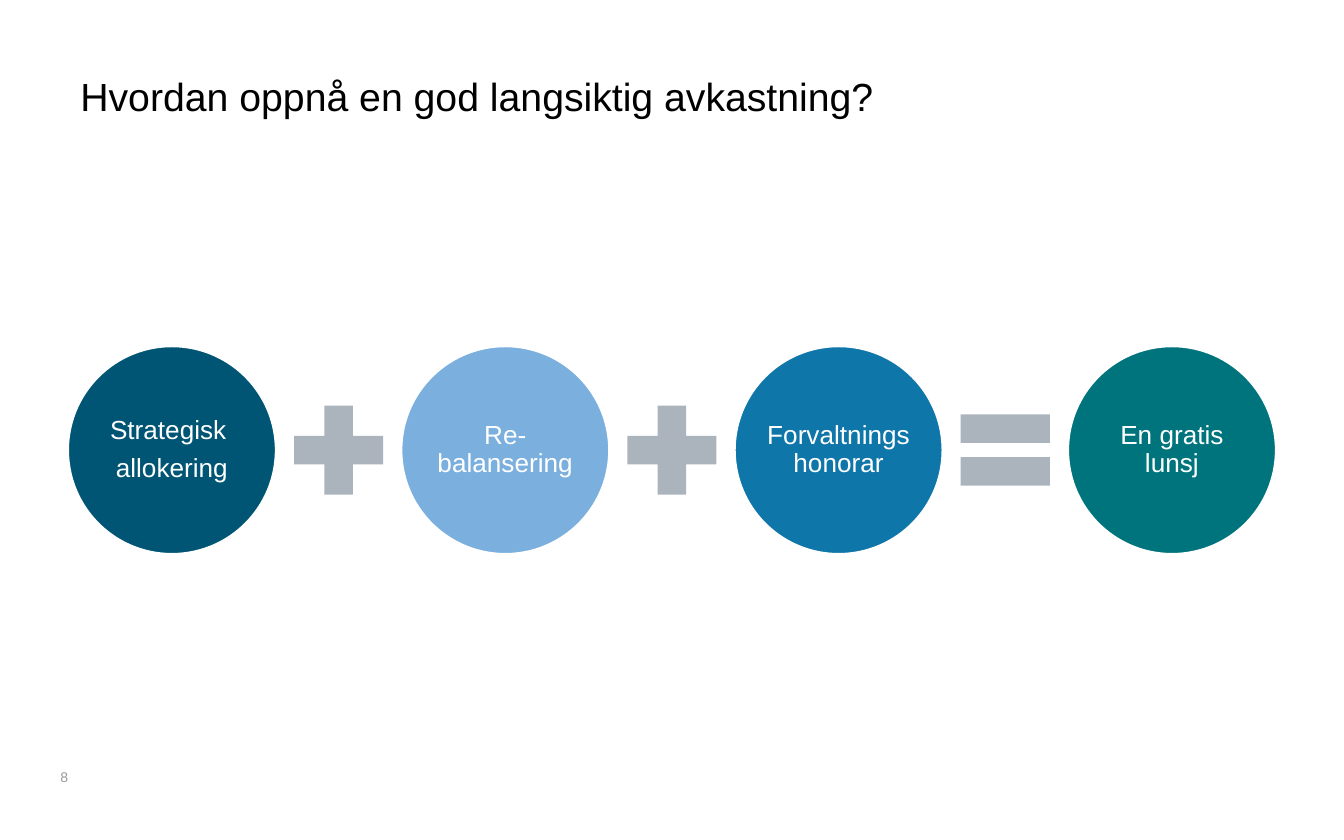
from dataclasses import dataclass

from pptx import Presentation
from pptx import util as u
from pptx.dml.color import RGBColor
from pptx.enum import shapes, text

FONT = "Arial"
BLACK = RGBColor(0x00, 0x00, 0x00)
WHITE = RGBColor(0xFF, 0xFF, 0xFF)
PAGE_GREY = RGBColor(0x9B, 0x9B, 0x9B)
OPERATOR_GREY = RGBColor(0xAB, 0xB4, 0xBD)
PETROL = RGBColor(0x00, 0x55, 0x75)
LIGHT_BLUE = RGBColor(0x7B, 0xAF, 0xDE)
BLUE = RGBColor(0x0F, 0x76, 0xA9)
TEAL = RGBColor(0x00, 0x74, 0x7C)

# Equation row, in centimetres
ROW_LEFT = 1.27
ROW_MIDDLE = 8.51
PITCH = 6.3
CIRCLE = 3.96
OPERATOR = 2.29
INSET = 0.05

PLUS = shapes.MSO_SHAPE.MATH_PLUS
EQUAL = shapes.MSO_SHAPE.MATH_EQUAL


@dataclass
class Term:
    lines: list[str]
    color: RGBColor


TERMS = [
    Term(["Strategisk ", "allokering"], PETROL),
    Term(["Re-balansering"], LIGHT_BLUE),
    Term(["Forvaltningshonorar"], BLUE),
    Term(["En gratis lunsj"], TEAL),
]
OPERATORS = [PLUS, PLUS, EQUAL]


def set_font(para, size: float, color: RGBColor) -> None:
    para.font.name = FONT
    para.font.size = u.Pt(size)
    para.font.color.rgb = color


def add_label(page, left: float, top: float, width: float, height: float,
              words: str, size: float, color: RGBColor) -> None:
    box = page.shapes.add_textbox(u.Cm(left), u.Cm(top), u.Cm(width), u.Cm(height))
    box.text_frame.word_wrap = True
    para = box.text_frame.paragraphs[0]
    para.text = words
    set_font(para, size, color)


def add_centred_shape(page, kind, middle: float, size: float, color: RGBColor):
    shape = page.shapes.add_shape(
        kind, u.Cm(middle - size / 2), u.Cm(ROW_MIDDLE - size / 2), u.Cm(size), u.Cm(size))
    shape.shadow.inherit = False
    shape.fill.solid()
    shape.fill.fore_color.rgb = color
    return shape


def add_term(page, term: Term, middle: float) -> None:
    circle = add_centred_shape(page, shapes.MSO_SHAPE.OVAL, middle, CIRCLE, term.color)
    circle.line.color.rgb = WHITE
    circle.line.width = u.Pt(2)
    frame = circle.text_frame
    frame.word_wrap = True
    frame.vertical_anchor = text.MSO_ANCHOR.MIDDLE
    frame.margin_left = frame.margin_right = u.Cm(INSET)
    frame.margin_top = frame.margin_bottom = u.Cm(INSET)
    frame.text = "\n".join(term.lines)
    for para in frame.paragraphs:
        para.alignment = text.PP_ALIGN.CENTER
        para.line_spacing = 0.9
        para.space_after = u.Pt(5)
        set_font(para, 14, WHITE)


def add_operator(page, kind, middle: float) -> None:
    sign = add_centred_shape(page, kind, middle, OPERATOR, OPERATOR_GREY)
    sign.line.fill.background()


def main() -> None:
    deck = Presentation()
    deck.slide_width, deck.slide_height = u.Cm(25.4), u.Cm(15.88)
    page = deck.slides.add_slide(deck.slide_layouts[6])

    # Title
    add_label(page, 1.27, 1.24, 22.86, 2.31,
              "Hvordan oppnå en god langsiktig avkastning?", 21, BLACK)

    # Terms, with an operator halfway between neighbours
    first_middle = ROW_LEFT + CIRCLE / 2
    for index, term in enumerate(TERMS):
        add_term(page, term, first_middle + index * PITCH)
    for index, kind in enumerate(OPERATORS):
        add_operator(page, kind, first_middle + (index + 0.5) * PITCH)

    # Page number
    add_label(page, 0.89, 14.4, 1.65, 0.69, "8", 7.5, PAGE_GREY)

    deck.save("out.pptx")


if __name__ == "__main__":
    main()
